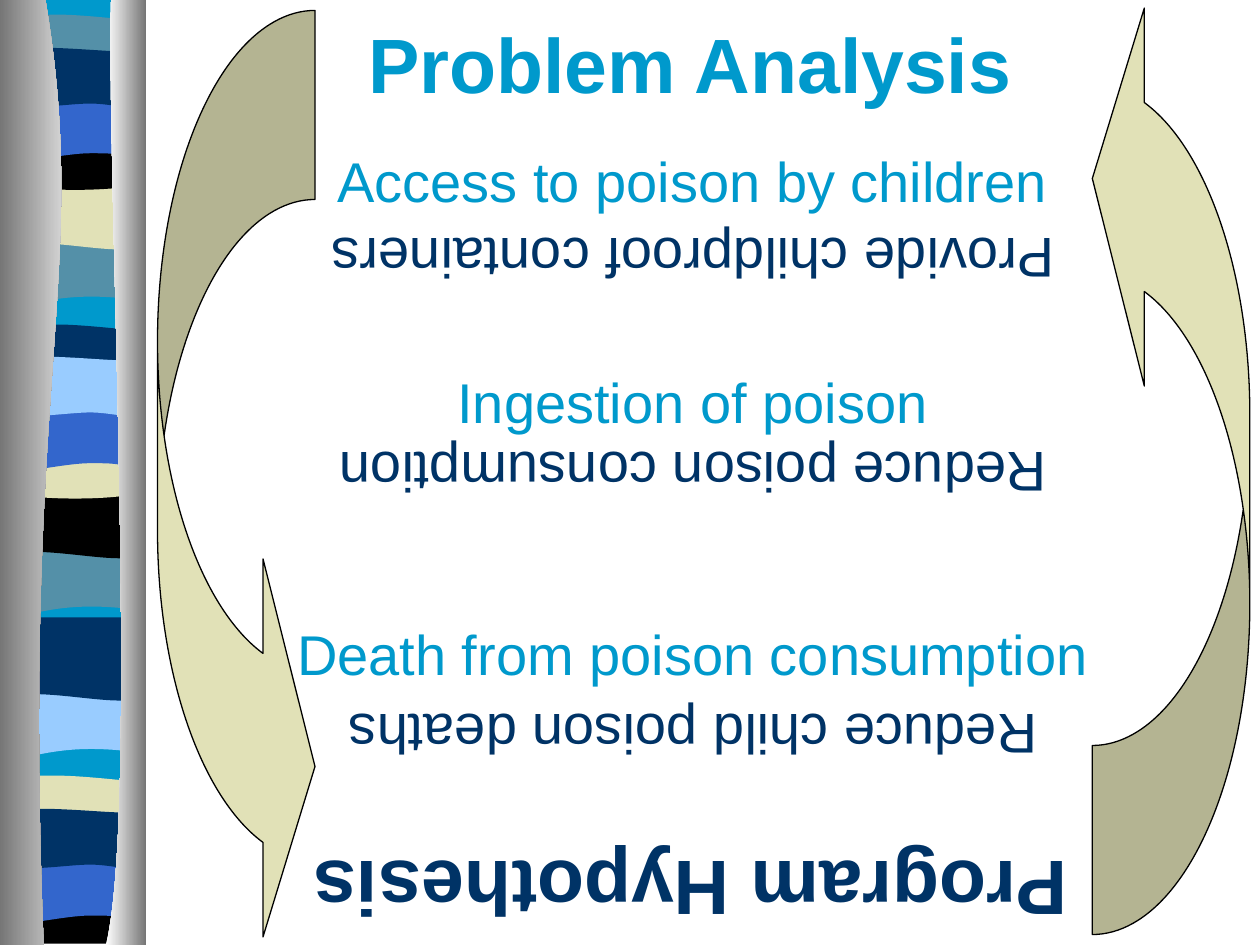
from lxml import etree
from pptx import Presentation
from pptx import util as u
from pptx.dml import color
from pptx.enum import shapes, text
from pptx.oxml import ns

SKY, NAVY, BLUE, ICE = "0099CC", "003366", "3366CC", "99CCFF"
TEAL, SAND, BLACK, GREY, WHITE = "5490A8", "E1E1B7", "000000", "767676", "FFFFFF"

LEFT, RIGHT = 3.8, 81.8
STRETCH = 1.33
BANDS = {
    "swell": [(RIGHT, 0), (RIGHT, 34), (28, 28, 17, 39.5, LEFT, 34), (LEFT, 0)],
    "ripple": [(RIGHT, 0), (RIGHT, 34), (69, 39.5, 28, 30, LEFT, 34), (LEFT, 0)],
    "ribbon": [(RIGHT, 3.5), (RIGHT, 21), (69, 24.5, 17, 24.5, LEFT, 21), (LEFT, 3.5),
               (8.5, 0, 21, 0.7, 33.5, 0.7), (46.5, 0.7, 72, 2.9, RIGHT, 3.5)],
    "bowl": [(RIGHT, 0), (RIGHT, 23.5), (69, 27.5, 17, 27.5, LEFT, 23.5), (LEFT, 0),
             (51.5, 3.6, 65.5, 0, RIGHT, 0)],
    "arch": [(RIGHT, 0), (RIGHT, 34), (70, 30, 65, 30, 51.5, 30),
             (38.5, 30, 15.5, 34, LEFT, 34), (LEFT, 0)],
    "flag": [(RIGHT, 3.6), (RIGHT, 26), (77, 29.5, 64.5, 26, 51.5, 26),
             (38.5, 26, 12, 29.5, LEFT, 26), (LEFT, 3.6), (15, 0, 57, 3.6, 69.5, 3.6),
             (83, 3.6, 79, 3.6, RIGHT, 3.6)],
    "foot": [(RIGHT, 0), (RIGHT, 26.6), (LEFT, 26.6), (LEFT, 0),
             (51.5, 3.6, 65.5, 0, RIGHT, 0)],
}
STACK = [
    ("swell", 133.2, TEAL), ("ripple", 101.5, SAND), ("ribbon", 11.5, TEAL),
    ("bowl", 77.8, BLACK), ("arch", 53.3, BLUE), ("flag", 29.5, NAVY),
    ("swell", 310.3, TEAL), ("ripple", 278, BLACK), ("ribbon", 188.6, NAVY),
    ("bowl", 254.2, SAND), ("arch", 230.4, BLUE), ("flag", 206, ICE),
    ("swell", 391.7, ICE), ("ripple", 359.3, NAVY), ("ribbon", 446.4, SAND),
    ("foot", 512.6, BLACK), ("arch", 488.9, BLUE), ("flag", 464.4, NAVY),
]
PAIRS = [
    ("Access to poison by children", 80, "Provide childproof containers", 126.4),
    ("Ingestion of poison", 206.6, "Reduce poison consumption", 248.4),
    ("Death from poison consumption", 350.6, "Reduce child poison deaths", 398.2),
]


def rgb(value):
    return color.RGBColor.from_string(value)


def stretched(steps):
    middle = max(max(step[1::2]) for step in steps) / 2
    return [tuple(middle + (value - middle) * STRETCH if i % 2 else value
                  for i, value in enumerate(step)) for step in steps]


def bend(shape, steps):
    lines = iter(shape.element.findall(".//" + ns.qn("a:lnTo")))
    for step in steps[1:]:
        first = next(lines)
        if len(step) == 6:
            curve = etree.Element(ns.qn("a:cubicBezTo"))
            first.addprevious(curve)
            for line in (first, next(lines), next(lines)):
                curve.append(line[0])
                line.getparent().remove(line)


def add_outline(page, steps, left, top, *colours):
    points = [(u.Pt(left + step[i]), u.Pt(top + step[i + 1]))
              for step in steps for i in range(0, len(step), 2)]
    builder = page.shapes.build_freeform(*points[0], scale=1.0)
    builder.add_line_segments(points[1:], close=True)
    shape = builder.convert_to_shape()
    bend(shape, steps)
    shape.shadow.inherit = False
    shape.line.fill.background()
    if len(colours) == 1:
        shape.fill.solid()
        shape.fill.fore_color.rgb = rgb(colours[0])
    else:
        shape.fill.gradient()
        shape.fill.gradient_angle = 0
        for stop, value in zip(shape.fill.gradient_stops, colours):
            stop.color.rgb = rgb(value)


def add_rail(page, left, top, height):
    base = [(LEFT, 0), (RIGHT, 0), (RIGHT, height - 2), (LEFT, height - 2)]
    add_outline(page, base, left, top, SKY)
    for kind, offset, colour in STACK:
        steps = BANDS[kind] if kind == "foot" else stretched(BANDS[kind])
        add_outline(page, steps, left, top + offset, colour)
    left_wall = [(26, 0), (52, 155.5, 12, 213, 25, height), (0, height), (0, 0)]
    right_wall = [(63.5, 0), (60.5, 90, 80, 465, 60.5, height), (83.5, height), (83.5, 0)]
    add_outline(page, left_wall, left, top, GREY, WHITE)
    add_outline(page, right_wall, left, top, WHITE, GREY)


def write(box, words, size, colour, bold=False):
    frame = box.text_frame
    frame.word_wrap = True
    para = frame.paragraphs[0]
    para.alignment = text.PP_ALIGN.CENTER
    span = para.add_run()
    span.text = words
    span.font.name = "Arial"
    span.font.size = u.Pt(size)
    span.font.bold = bold
    span.font.color.rgb = rgb(colour)
    return para


def add_heading(box, words, left, top, width, height, colour):
    box.left, box.top, box.width, box.height = map(u.Pt, (left, top, width, height))
    box.text_frame.vertical_anchor = text.MSO_ANCHOR.MIDDLE
    write(box, words, 44, colour, bold=True)


def add_statement(page, words, left, top, width, colour, turn=0):
    box = page.shapes.add_textbox(*map(u.Pt, (left, top, width, 45.4)))
    box.rotation = turn
    write(box, words, 32, colour).space_before = u.Pt(3)


def add_arrow(page, left, top, width, height, turn=0):
    arrow = page.shapes.add_shape(shapes.MSO_SHAPE.CURVED_RIGHT_ARROW,
                                  *map(u.Pt, (left, top, width, height)))
    for i, value in enumerate((1.2, 2.4, 0.33)):
        arrow.adjustments[i] = value
    arrow.rotation = turn
    arrow.shadow.inherit = False
    arrow.fill.solid()
    arrow.fill.fore_color.rgb = rgb(SAND)
    arrow.line.color.rgb = rgb(BLACK)
    arrow.line.width = u.Pt(0.75)


def add_analysis(page, left, top, width):
    add_heading(page.shapes.title, "Problem Analysis", left, top + 6, width, 60, SKY)
    for problem, problem_top, _, _ in PAIRS:
        add_statement(page, problem, left + 32.4, top + problem_top, 564, SKY)
    closing = page.shapes.add_textbox(0, 0, 0, 0)
    closing.rotation = 180
    add_heading(closing, "Program Hypothesis", left, top + 480, width, 60, NAVY)
    for _, _, answer, answer_top in reversed(PAIRS):
        add_statement(page, answer, left + 32.4, top + answer_top, 564, NAVY, 180)
    add_arrow(page, left + 8.5, top + 6, 90, 540)
    add_arrow(page, left + width - 83.3, top - 6, 90, 540, 180)


def main():
    deck = Presentation()
    deck.slide_width, deck.slide_height = u.Pt(720), u.Pt(540)
    page = deck.slides.add_slide(deck.slide_layouts[5])
    add_rail(page, 0, 0, 540)
    add_analysis(page, 81.5, 0, 626)
    deck.save("out.pptx")


if __name__ == "__main__":
    main()
